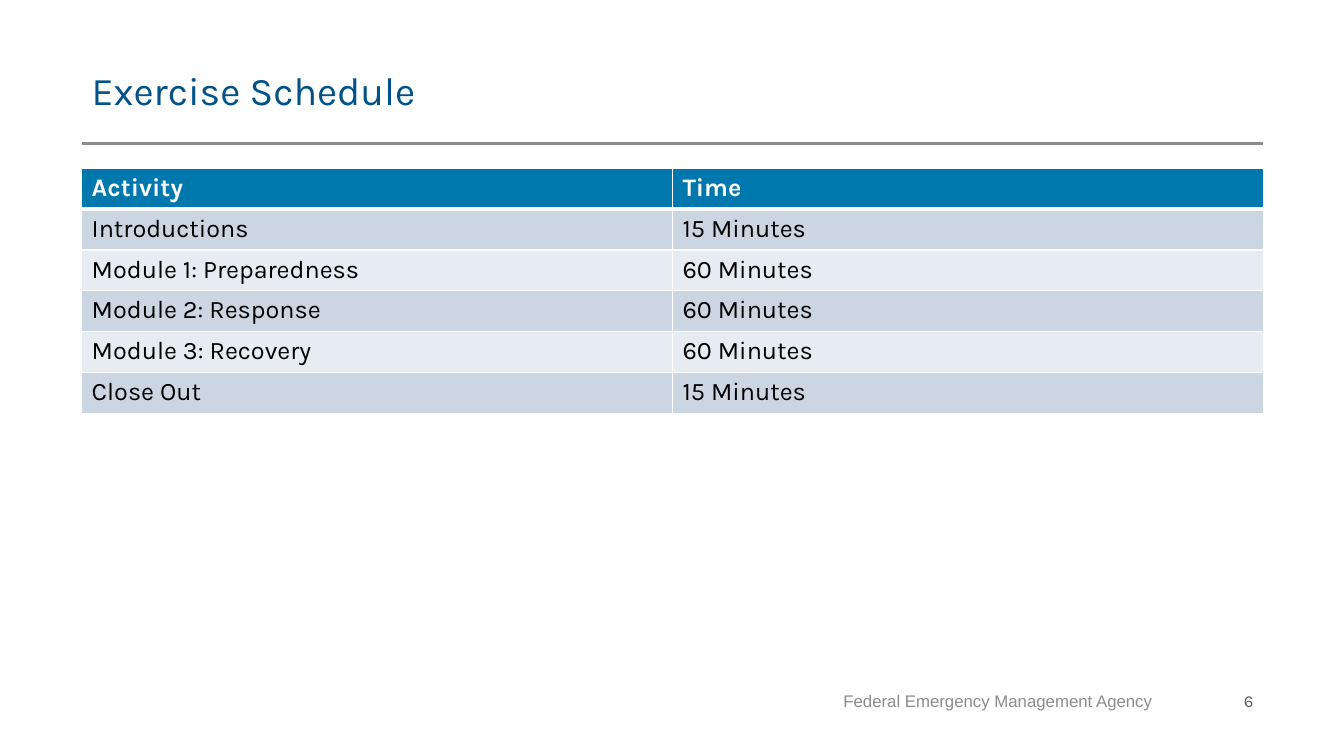
"""Build the exercise schedule slide."""
from dataclasses import dataclass

from lxml import etree
from pptx import Presentation, util as u
from pptx.dml import color
from pptx.enum import shapes, text
from pptx.oxml import ns

COLORS = {
    "title": "005288",
    "rule": "8A8C8F",
    "header": "0078AE",
    "odd_row": "CCD6E3",
    "even_row": "E7ECF2",
    "white": "FFFFFF",
    "black": "000000",
    "footer": "8C8C8C",
    "number": "5A5B5D",
}
LEFT, WIDTH = 0.81, 11.72
TABLE_TOP, TABLE_HEIGHT = 1.67, 2.43


@dataclass(frozen=True)
class Label:
    words: str
    left: float
    top: float
    width: float
    height: float
    size: int
    font: str
    color: str
    align: text.PP_ALIGN


@dataclass(frozen=True)
class Activity:
    name: str
    time: str


LABELS = [
    Label("Exercise Schedule", LEFT, 0.49, WIDTH, 0.81, 28, "Karla", "title", text.PP_ALIGN.LEFT),
    Label("Federal Emergency Management Agency", 6.67, 6.75, 4.86, 0.4, 12, "Arial", "footer",
          text.PP_ALIGN.RIGHT),
    Label("6", 11.53, 6.75, 1, 0.4, 12, "Karla", "number", text.PP_ALIGN.RIGHT),
]
SCHEDULE = [
    Activity("Activity", "Time"),
    Activity("Introductions", "15 Minutes"),
    Activity("Module 1: Preparedness", "60 Minutes"),
    Activity("Module 2: Response", "60 Minutes"),
    Activity("Module 3: Recovery", "60 Minutes"),
    Activity("Close Out", "15 Minutes"),
]


def rgb(name: str) -> color.RGBColor:
    return color.RGBColor.from_string(COLORS[name])


def style_text(para, size: int, font: str, color_name: str, bold: bool = False) -> None:
    for span in para.runs:
        span.font.size = u.Pt(size)
        span.font.name = font
        span.font.bold = bold
        span.font.color.rgb = rgb(color_name)


def add_label(page, label: Label) -> None:
    box = page.shapes.add_textbox(u.Inches(label.left), u.Inches(label.top),
                                  u.Inches(label.width), u.Inches(label.height))
    frame = box.text_frame
    frame.word_wrap = True
    frame.vertical_anchor = text.MSO_ANCHOR.MIDDLE
    frame.text = label.words
    para = frame.paragraphs[0]
    para.alignment = label.align
    style_text(para, label.size, label.font, label.color)


def add_rule(page) -> None:
    rule = page.shapes.add_connector(shapes.MSO_CONNECTOR.STRAIGHT, u.Inches(LEFT), u.Inches(1.42),
                                     u.Inches(LEFT + WIDTH), u.Inches(1.42))
    rule.line.color.rgb = rgb("rule")
    rule.line.width = u.Pt(2)
    etree.SubElement(rule._element.spPr, ns.qn("a:effectLst"))


def set_borders(cell, top: int, bottom: int) -> None:
    properties = cell._tc.get_or_add_tcPr()
    widths = {"a:lnL": 1, "a:lnR": 1, "a:lnT": top, "a:lnB": bottom}
    for position, (tag, width) in enumerate(widths.items()):
        border = etree.Element(ns.qn(tag), w=str(u.Pt(width)))
        fill = etree.SubElement(border, ns.qn("a:solidFill"))
        etree.SubElement(fill, ns.qn("a:srgbClr"), val=COLORS["white"])
        properties.insert(position, border)


def add_schedule(page) -> None:
    table = page.shapes.add_table(len(SCHEDULE), 2, u.Inches(LEFT), u.Inches(TABLE_TOP),
                                  u.Inches(WIDTH), u.Inches(TABLE_HEIGHT)).table
    for row, activity in enumerate(SCHEDULE):
        is_header = row == 0
        fill_name = "header" if is_header else "odd_row" if row % 2 else "even_row"
        for column, words in enumerate((activity.name, activity.time)):
            cell = table.cell(row, column)
            cell.text_frame.text = words
            style_text(cell.text_frame.paragraphs[0], 18, "Karla",
                       "white" if is_header else "black", is_header)
            cell.fill.solid()
            cell.fill.fore_color.rgb = rgb(fill_name)
            set_borders(cell, 3 if row == 1 else 1, 3 if is_header else 1)


def main() -> None:
    deck = Presentation()
    deck.slide_width, deck.slide_height = u.Inches(13.33), u.Inches(7.5)
    page = deck.slides.add_slide(deck.slide_layouts[6])
    add_rule(page)
    add_schedule(page)
    for label in LABELS:
        add_label(page, label)
    deck.save("out.pptx")


if __name__ == "__main__":
    main()
